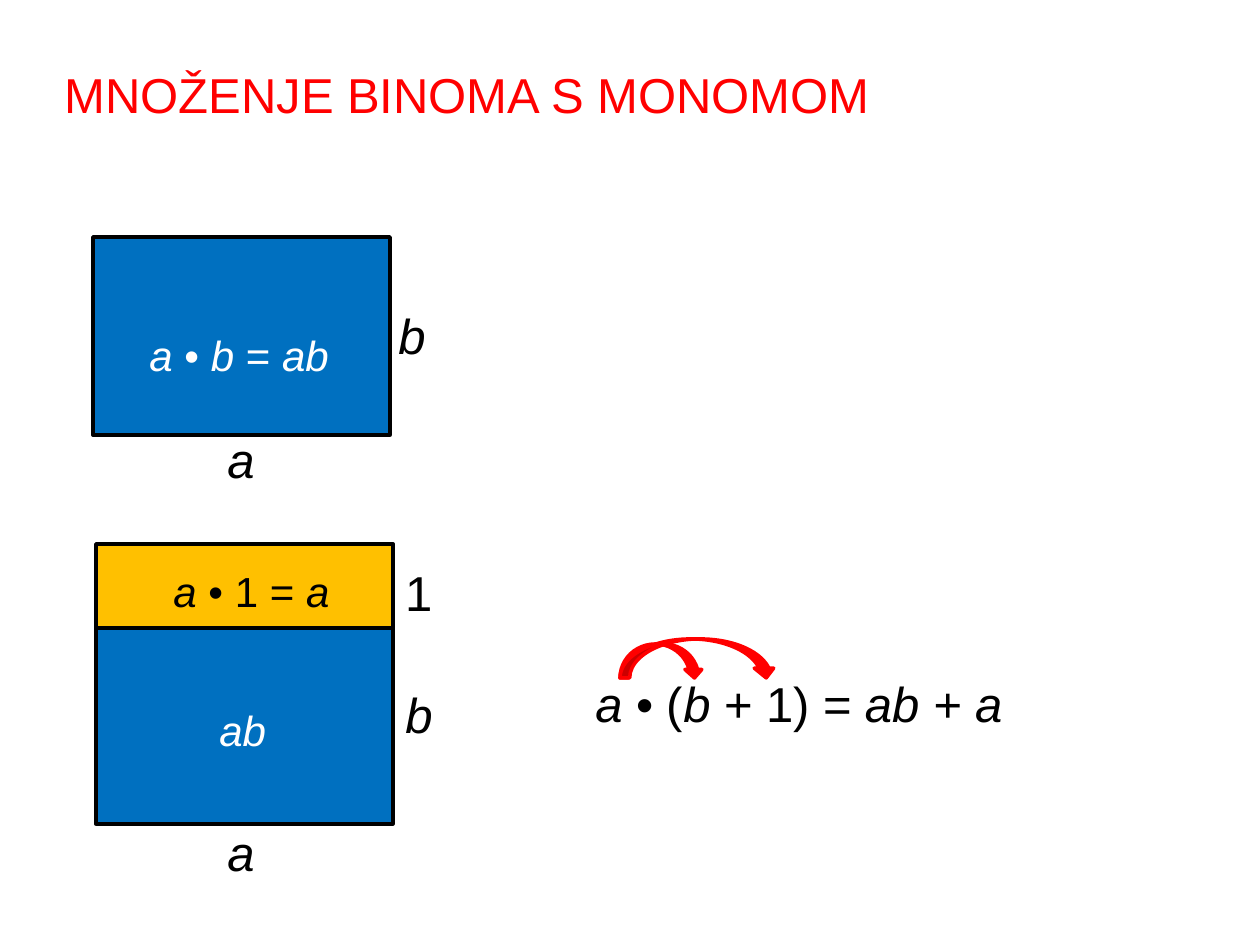
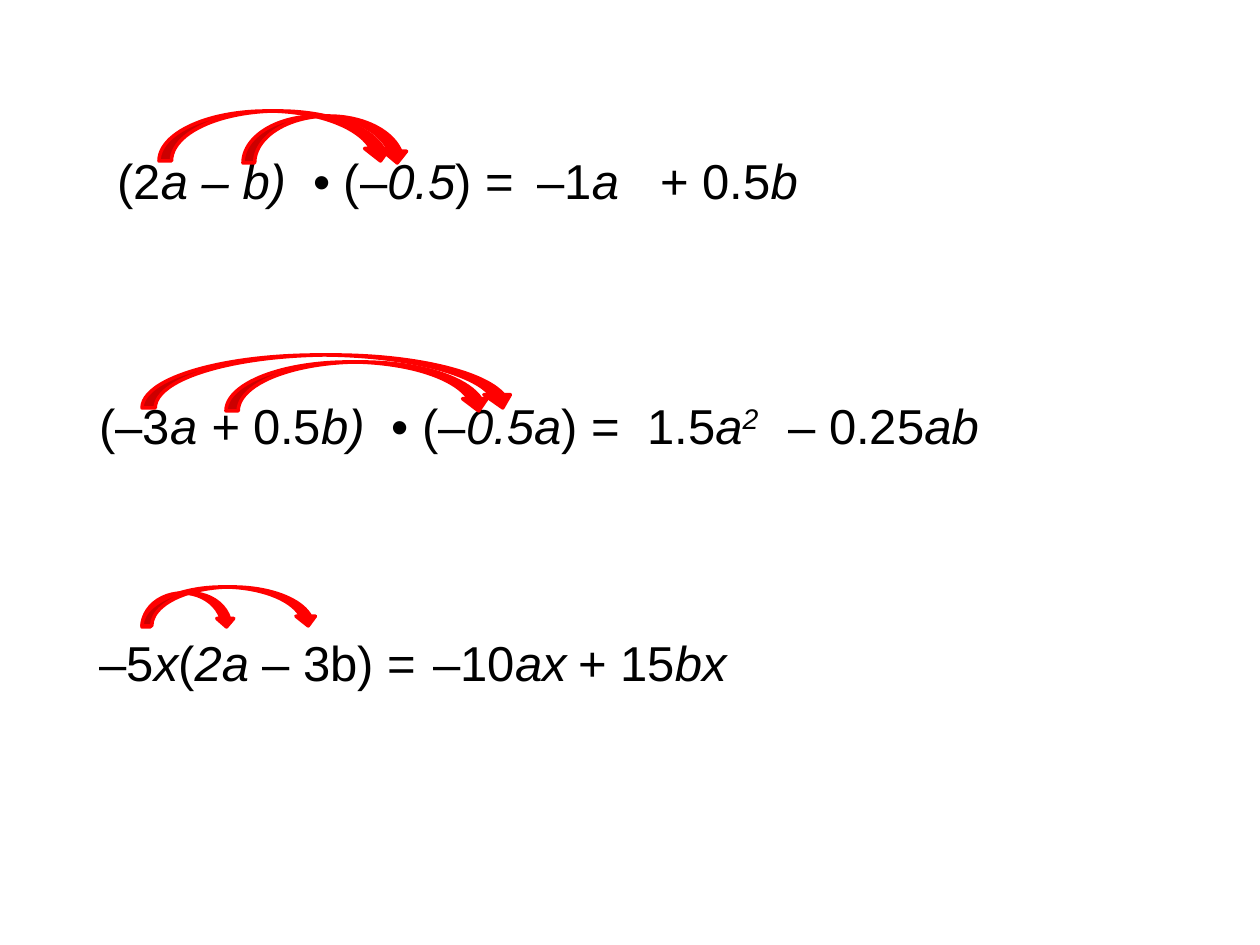
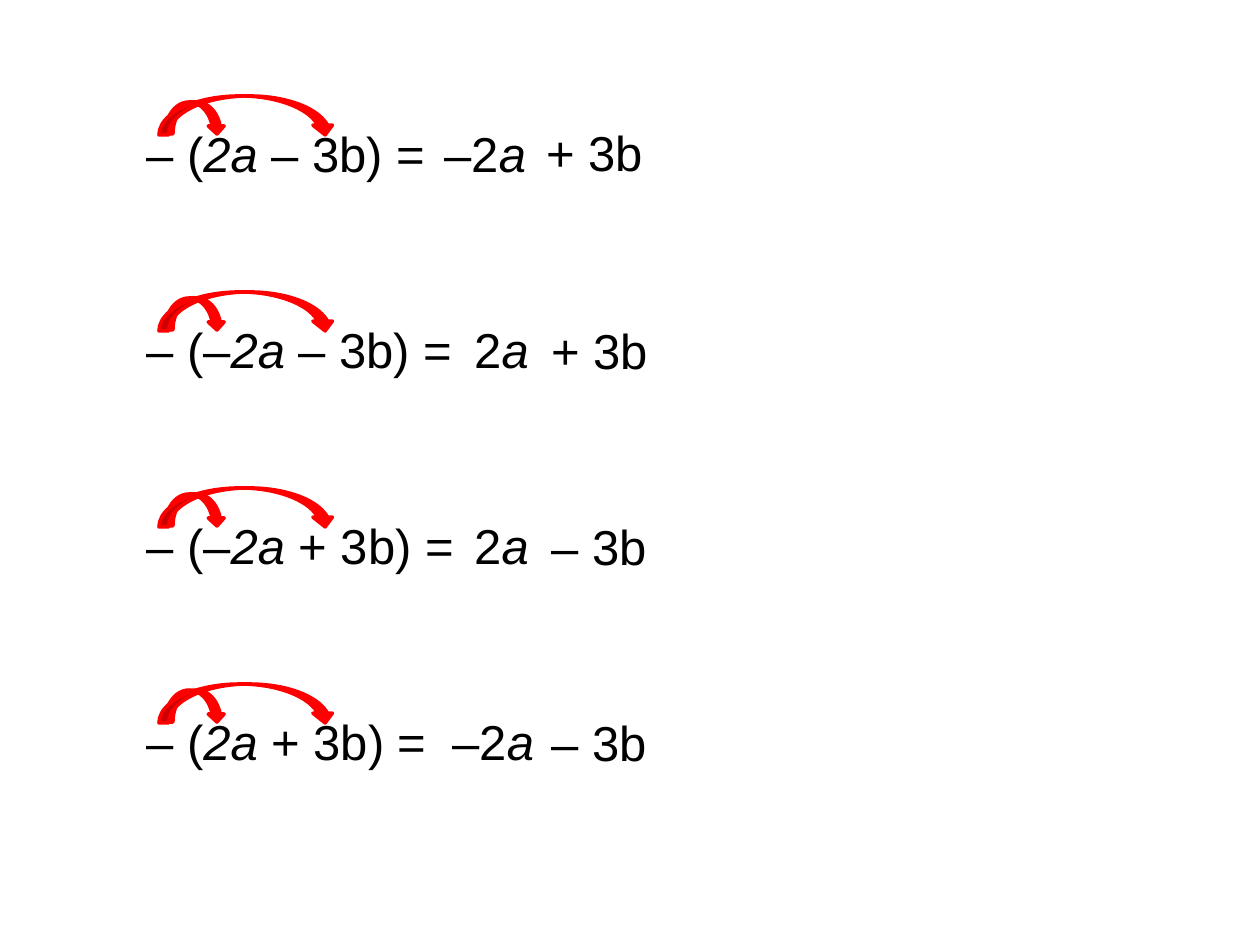
"""Builds three slides on multiplying a binomial by a monomial."""
from pptx import Presentation
from pptx.dml.color import RGBColor
from pptx import util as u
from pptx.enum import shapes, text

SCALE = 914400 / 126
RED, BLUE, AMBER = "FF0000", "0070C0", "FFC000"
BLACK, WHITE = "000000", "FFFFFF"
FRAME = {"word_wrap": True, "vertical_anchor": text.MSO_ANCHOR.TOP,
         "auto_size": text.MSO_AUTO_SIZE.SHAPE_TO_FIT_TEXT}
LARGE, SMALL = 28, 24
HEIGHTS = {LARGE: 72, SMALL: 63}
ROW_PITCH = 196


def emu(*lengths):
    """Turn px lengths into EMU."""
    return [u.Emu(round(length * SCALE)) for length in lengths]


def color(value):
    """Turn a hex string into a colour."""
    return RGBColor.from_string(value)


def assign(target, values):
    """Set each named attribute on the target."""
    for name, value in values.items():
        setattr(target, name, value)


def write(box, words, size=LARGE, ink=BLACK):
    """Write words where *stars* mark italics and ^ marks a superscript."""
    assign(box.text_frame, FRAME)
    para = box.text_frame.paragraphs[0]
    para.alignment = text.PP_ALIGN.LEFT
    for index, piece in enumerate(words.split("*")):
        if not piece:
            continue
        span = para.add_run()
        span.text = piece.lstrip("^")
        assign(span.font, {"name": "Arial", "size": u.Pt(size), "italic": index % 2 == 1})
        span.font.color.rgb = color(ink)
        if piece.startswith("^"):
            span.font._element.set("baseline", "30000")


def label(page, left, top, width, words, size=LARGE, ink=BLACK):
    """Add a one-line text box."""
    box = page.shapes.add_textbox(*emu(left, top, width, HEIGHTS[size]))
    write(box, words, size, ink)


def figure(page, kind, box, fill, line):
    """Add a filled and outlined preset shape."""
    shape = page.shapes.add_shape(kind, *emu(*box))
    shape.shadow.inherit = False
    shape.fill.solid()
    shape.fill.fore_color.rgb = color(fill)
    shape.line.color.rgb = color(line)
    shape.line.width = u.Pt(2)


def area(page, box, fill, ink, product, sides):
    """Draw a rectangle with its product inside and its side lengths around it."""
    left, top = box[:2]
    figure(page, shapes.MSO_SHAPE.RECTANGLE, box, fill, BLACK)
    for dx, dy, width, words in sides:
        label(page, left + dx, top + dy, width, words)
    dx, dy, width, words = product
    label(page, left + dx, top + dy, width, words, SMALL, ink)


def equation(page, left, top, terms, arrows):
    """Write the terms of an equation and the arrows that join its factors."""
    for dx, dy, width, words in terms:
        label(page, left + dx, top + dy, width, words)
    for dx, dy, width, height in arrows:
        figure(page, shapes.MSO_SHAPE.CURVED_DOWN_ARROW,
               (left + dx, top + dy, width, height), RED, RED)


def area_slide(deck):
    """Build the slide that explains the product with areas."""
    page = deck.slides.add_slide(deck.slide_layouts[5])
    title = page.shapes.title
    assign(title, dict(zip(("left", "top", "width", "height"), emu(52, 58, 1265, 72))))
    write(title, "MNOŽENJE BINOMA S MONOMOM", ink=RED)
    area(page, (93, 237, 297, 198), BLUE, WHITE, (44, 86, 218, "*a* • *b* = *ab*"),
         [(122, 186, 74, "*a*"), (293, 62, 74, "*b*")])
    area(page, (96, 626, 297, 198), BLUE, WHITE, (111, 72, 299, "*ab*"),
         [(119, 190, 74, "*a*"), (297, 52, 163, "*b*")])
    area(page, (96, 544, 297, 84), AMBER, BLACK, (65, 15, 299, "*a* • 1 = *a*"),
         [(297, 12, 163, "1")])
    equation(page, 583, 667,
             [(0, 0, 299, "*a* • (*b* + 1) ="), (256, 0, 278, "* ab + a*")],
             [(37, -23, 83, 34), (37, -28, 156, 39)])


def examples_slide(deck):
    """Build the slide with three worked products."""
    page = deck.slides.add_slide(deck.slide_layouts[6])
    equation(page, 105, 144,
             [(0, 0, 878, "(2*a – b) * • (–*0.5*) ="),
              (420, 0, 282, "–1*a*"), (543, 0, 282, "+ 0.5*b*")],
             [(54, -33, 234, 50), (138, -28, 166, 47)])
    equation(page, 87, 389,
             [(0, 0, 878, "(–3*a + *0.5*b) * • (–*0.5a*) ="),
              (548, 0, 282, "1.5*a**^2*"), (689, 0, 282, "– 0.25*ab*")],
             [(55, -34, 374, 53), (139, -27, 265, 49)])
    equation(page, 87, 626,
             [(0, 0, 988, "–5*x*(*2a* – 3b) ="),
              (334, 0, 338, "–10*ax*"), (479, 0, 338, "+ 15*bx*")],
             [(55, -33, 93, 34), (55, -39, 176, 39)])


def signs_slide(deck):
    """Build the slide that removes brackets after a minus sign."""
    page = deck.slides.add_slide(deck.slide_layouts[6])
    rows = [("– (*2a* – 3b) =", (298, 0, 338, "–2*a*"), (400, -1, 338, "+ 3b")),
            ("– (–*2a* – 3b) =", (328, 0, 338, "2*a*"), (405, 1, 338, "+ 3b")),
            ("– (–*2a* + 3b) =", (328, 0, 338, "2*a*"), (405, 1, 338, "– 3b")),
            ("– (*2a* + 3b) =", (306, 0, 338, "–2*a*"), (405, 1, 338, "– 3b"))]
    for index, (product, *results) in enumerate(rows):
        equation(page, 134, 117 + index * ROW_PITCH,
                 [(0, 0, 988, product), *results],
                 [(31, -15, 60, 32), (25, -21, 176, 39)])


def main():
    """Build and save the deck."""
    deck = Presentation()
    deck.slide_width, deck.slide_height = emu(1260, 945)
    for build in (area_slide, examples_slide, signs_slide):
        build(deck)
    deck.save("out.pptx")


if __name__ == "__main__":
    main()
